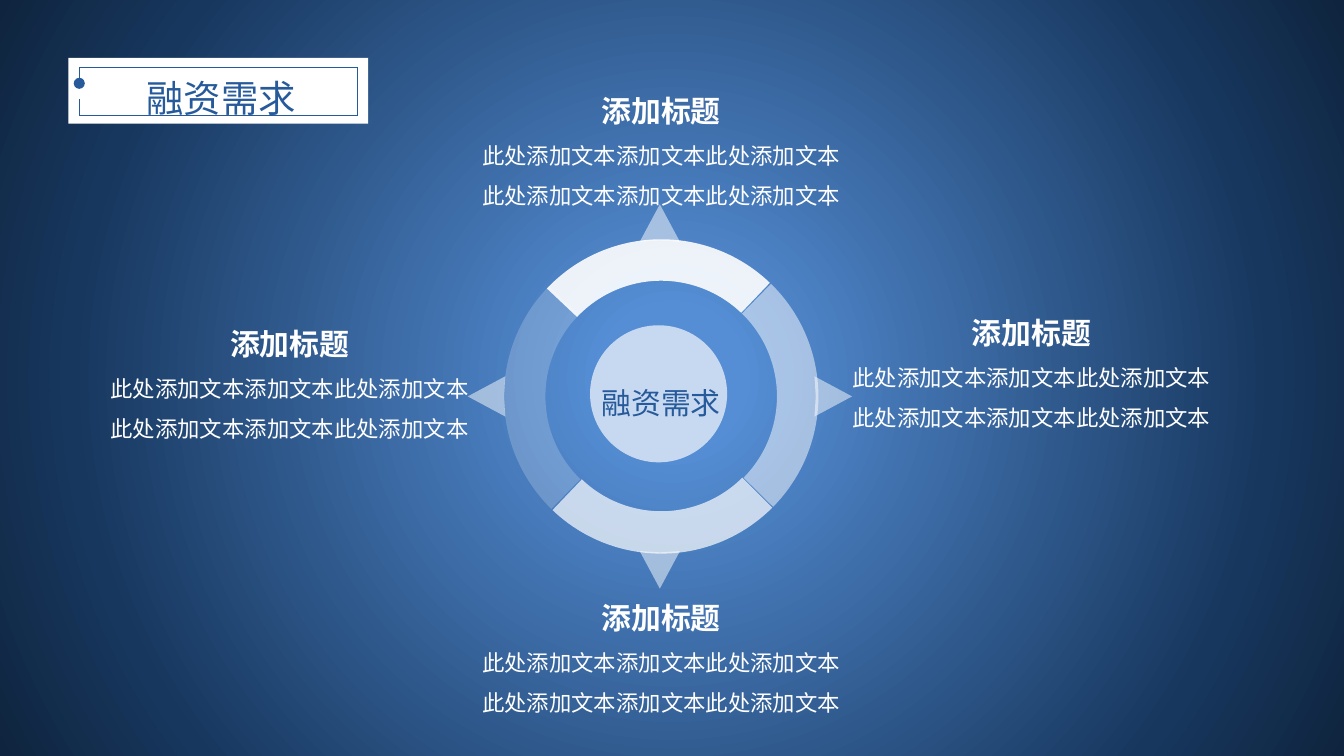
import math

from lxml import etree
from pptx import Presentation
from pptx.dml.color import RGBColor
from pptx.enum import shapes, text
from pptx.oxml import parse_xml
from pptx.oxml.ns import nsdecls, qn
from pptx.util import Inches, Pt

COLORS = {"white": "FFFFFF", "accent": "265A9A"}
BACKGROUND_STOPS = {9: "558ED5", 78: "17375E", 100: "0F243E"}
FONT = "Noto Sans CJK SC"
TOPIC = "融资需求"
HEADING = "添加标题"
DETAIL = "此处添加文本添加文本此处添加文本"


def paint_background(slide):
    stops = "".join(
        f'<a:gs pos="{pos * 1000}"><a:srgbClr val="{color}"/></a:gs>'
        for pos, color in BACKGROUND_STOPS.items())
    slide.element.cSld.insert(0, parse_xml(
        f'<p:bg {nsdecls("p", "a")}><p:bgPr><a:gradFill rotWithShape="1">'
        f'<a:gsLst>{stops}</a:gsLst><a:path path="circle">'
        '<a:fillToRect l="50000" t="50000" r="50000" b="50000"/></a:path>'
        '</a:gradFill><a:effectLst/></p:bgPr></p:bg>'))


def fill_white(shape, opacity=100):
    shape.shadow.inherit = False
    shape.line.fill.background()
    shape.fill.solid()
    shape.fill.fore_color.rgb = RGBColor.from_string(COLORS["white"])
    if opacity < 100:
        color = shape.fill._xPr.find(qn("a:solidFill"))[0]
        etree.SubElement(color, qn("a:alpha"), val=str(opacity * 1000))


def write_lines(box, lines, color):
    """Fill a box with centred (wording, size, bold) lines."""
    frame = box.text_frame
    frame.word_wrap = True
    frame.auto_size = text.MSO_AUTO_SIZE.SHAPE_TO_FIT_TEXT
    frame.vertical_anchor = text.MSO_ANCHOR.TOP
    for index, (wording, size, bold) in enumerate(lines):
        paragraph = frame.add_paragraph() if index else frame.paragraphs[0]
        paragraph.text = wording
        paragraph.alignment = text.PP_ALIGN.CENTER
        paragraph.line_spacing = 1.5
        font = paragraph.font
        font.name, font.size, font.bold = FONT, Pt(size), bold
        font.color.rgb = RGBColor.from_string(COLORS[color])
        etree.SubElement(font._rPr, qn("a:ea"), typeface=FONT)


def add_frame_line(slide, start, end, dot=False):
    line = slide.shapes.add_connector(
        shapes.MSO_CONNECTOR.STRAIGHT, *map(Inches, (*start, *end)))
    line.line.color.rgb = RGBColor.from_string(COLORS["accent"])
    line.line.width = Pt(0.25)
    if dot:
        etree.SubElement(line.line._get_or_add_ln(), qn("a:tailEnd"), type="oval")
    etree.SubElement(line._element.spPr, qn("a:effectLst"))


def add_title_plate(slide, left, top, width, height):
    plate = slide.shapes.add_shape(
        shapes.MSO_SHAPE.RECTANGLE, *map(Inches, (left, top, width, height)))
    fill_white(plate)

    x1, x2 = left + 0.08, left + width - 0.08
    y1, y2 = top + 0.07, top + height - 0.06
    add_frame_line(slide, (x1, y1), (x2, y1))
    add_frame_line(slide, (x2, y1), (x2, y2))
    add_frame_line(slide, (x2, y2), (x1, y2))
    add_frame_line(slide, (x1, y1), (x1, y1 + 0.12), dot=True)
    add_frame_line(slide, (x1, y2), (x1, y2 - 0.12))

    title = slide.shapes.title
    title.left, title.top = Inches(left + 0.12), Inches(top - 0.09)
    title.width, title.height = Inches(2.03), Inches(0.55)
    write_lines(title, [(TOPIC, 20, False)], "accent")
    slide.shapes._spTree.append(title._element)


def add_ring_quarter(slide, left, top, size, flip, opacity, angles):
    quarter = slide.shapes.add_shape(
        shapes.MSO_SHAPE.BLOCK_ARC, *map(Inches, (left, top, size, size)))
    for index, value in enumerate(angles):
        quarter.adjustments[index] = value
    quarter.rotation = 44
    for axis in flip:
        quarter._element.spPr.xfrm.set("flip" + axis, "1")
    fill_white(quarter, opacity)


def add_pointer(slide, center_x, center_y, degrees):
    """Add an arrow tip that points away from the ring's centre."""
    cos, sin = math.cos(math.radians(degrees)), math.sin(math.radians(degrees))
    points = [
        (Inches(center_x + out * cos - side * sin),
         Inches(center_y + out * sin + side * cos))
        for out, side in ((1.15, -0.15), (1.43, 0), (1.15, 0.15), (1.16, 0))]
    builder = slide.shapes.build_freeform(*points[0])
    builder.add_line_segments(points[1:])
    fill_white(builder.convert_to_shape(), 50)


def add_ring(slide, left, top, size):
    right_angles = (162.172, 0.367, 0.132)
    bottom_angles = (162.172, 215.391, 0.135)
    for flip, opacity, angles in (
            ("", 50, right_angles), ("H", 90, right_angles),
            ("HV", 20, right_angles), ("V", 70, bottom_angles)):
        add_ring_quarter(slide, left, top, size, flip, opacity, angles)

    for degrees in (0, 180, 270, 90):
        add_pointer(slide, left + size / 2 - 0.01, top + size / 2, degrees)

    hub = slide.shapes.add_shape(
        shapes.MSO_SHAPE.FLOWCHART_CONNECTOR,
        *map(Inches, (left + 0.64, top + 0.64, 1.02, 1.02)))
    fill_white(hub, 67)
    hub_label = slide.shapes.add_textbox(
        *map(Inches, (left + 0.5, top + 0.9, 1.34, 0.5)))
    write_lines(hub_label, [(TOPIC, 16, False)], "accent")


def add_caption(slide, left, top, width, height=1.11):
    caption = slide.shapes.add_textbox(*map(Inches, (left, top, width, height)))
    write_lines(
        caption,
        [(HEADING, 16, True), (DETAIL, 12, False), (DETAIL, 12, False)],
        "white")


def main():
    deck = Presentation()
    deck.slide_width = Inches(10)
    deck.slide_height = deck.slide_width * 9 // 16
    slide = deck.slides.add_slide(deck.slide_layouts[5])
    paint_background(slide)
    add_title_plate(slide, 0.51, 0.43, 2.23, 0.49)
    add_ring(slide, 3.75, 1.78, 2.34)
    for left, top, width in (
            (3.36, 0.51, 3.12), (6.19, 2.16, 2.97),
            (3.36, 4.28, 3.12), (0.64, 2.24, 3.03)):
        add_caption(slide, left, top, width)
    deck.save("out.pptx")


if __name__ == "__main__":
    main()
